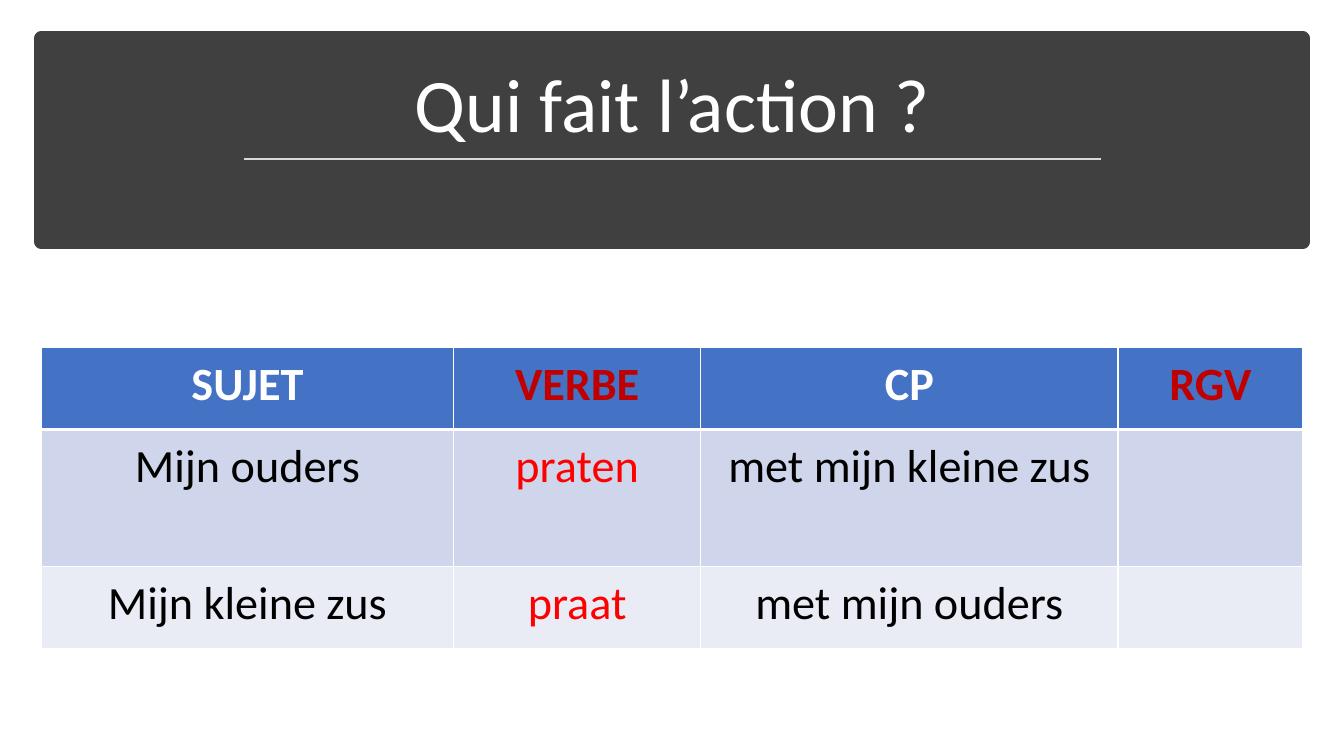
from dataclasses import dataclass

from lxml.etree import SubElement
from pptx import Presentation
from pptx.dml.color import RGBColor
from pptx.enum.shapes import MSO_CONNECTOR, MSO_SHAPE
from pptx.enum.text import MSO_ANCHOR, MSO_AUTO_SIZE, PP_ALIGN
from pptx.oxml.ns import qn
from pptx.util import Inches, Pt


@dataclass(frozen=True)
class Theme:
    font: str = "Calibri"
    title_size: float = 54
    table_size: float = 33
    white: str = "FFFFFF"
    black: str = "000000"
    band: str = "404040"
    rule: str = "D9D9D9"
    header_fill: str = "4472C4"
    row_fills: tuple = ("CFD5EA", "E9EBF5")
    header_accent: str = "C00000"
    verb: str = "FF0000"


class SlideBuilder:
    def __init__(self, slide, theme):
        self.slide = slide
        self.theme = theme

    def set_text(self, frame, text, size, color, bold=False):
        frame.text = text
        paragraph = frame.paragraphs[0]
        paragraph.alignment = PP_ALIGN.CENTER
        for run in paragraph.runs:
            run.font.name = self.theme.font
            run.font.size = Pt(size)
            run.font.bold = bold
            run.font.color.rgb = RGBColor.from_string(color)

    def title(self, text, left, top, width, height):
        heading = self.slide.shapes.title
        heading.left, heading.top = Inches(left), Inches(top)
        heading.width, heading.height = Inches(width), Inches(height)
        frame = heading.text_frame
        self.set_text(frame, text, self.theme.title_size, self.theme.white)
        frame.word_wrap = True
        frame.auto_size = MSO_AUTO_SIZE.NONE
        frame.vertical_anchor = MSO_ANCHOR.BOTTOM
        frame.paragraphs[0].line_spacing = 0.9

    def band(self, left, top, width, height):
        banner = self.slide.shapes.add_shape(
            MSO_SHAPE.RECTANGLE, Inches(left), Inches(top), Inches(width), Inches(height))
        color = RGBColor.from_string(self.theme.band)
        banner.shadow.inherit = False
        banner.fill.solid()
        banner.fill.fore_color.rgb = color
        banner.line.color.rgb = color
        banner.line.width = Pt(10)
        self.slide.shapes.title.element.addprevious(banner.element)

    def rule(self, left, right, y):
        underline = self.slide.shapes.add_connector(
            MSO_CONNECTOR.STRAIGHT, Inches(left), Inches(y), Inches(right), Inches(y))
        underline.line.color.rgb = RGBColor.from_string(self.theme.rule)
        underline.line.width = Pt(1.75)
        SubElement(underline.element.spPr, qn("a:effectLst"))

    def borders(self, cell, top, bottom):
        properties = cell._tc.get_or_add_tcPr()
        for side, width in (("L", 1), ("R", 1), ("T", top), ("B", bottom)):
            edge = SubElement(properties, qn(f"a:ln{side}"), w=str(Pt(width)))
            fill = SubElement(edge, qn("a:solidFill"))
            SubElement(fill, qn("a:srgbClr"), val=self.theme.white)

    def cell(self, cell, text, fill, color, bold, top, bottom):
        cell.margin_left = cell.margin_right = Inches(0.18)
        cell.margin_top = cell.margin_bottom = Inches(0.09)
        self.borders(cell, top, bottom)
        cell.fill.solid()
        cell.fill.fore_color.rgb = RGBColor.from_string(fill)
        if text:
            self.set_text(cell.text_frame, text, self.theme.table_size, color, bold)

    def table(self, rows, left, top, widths, heights):
        theme = self.theme
        grid = self.slide.shapes.add_table(
            len(rows), len(widths), Inches(left), Inches(top),
            Inches(sum(widths)), Inches(sum(heights))).table
        for column, width in zip(grid.columns, widths):
            column.width = Inches(width)
        for row, height in zip(grid.rows, heights):
            row.height = Inches(height)
        header_colors = (theme.white, theme.header_accent) * 2
        body_colors = (theme.black, theme.verb, theme.black, theme.black)
        for r, texts in enumerate(rows):
            header = r == 0
            fill = theme.header_fill if header else theme.row_fills[(r - 1) % 2]
            colors = header_colors if header else body_colors
            for c, text in enumerate(texts):
                self.cell(grid.cell(r, c), text, fill, colors[c], header,
                          top=3 if r == 1 else 1, bottom=3 if header else 1)


def main():
    deck = Presentation()
    deck.slide_width, deck.slide_height = Inches(13.33), Inches(7.5)
    title_only = deck.slide_layouts[5]
    builder = SlideBuilder(deck.slides.add_slide(title_only), Theme())
    builder.band(0.41, 0.38, 12.51, 2.02)
    builder.title("Qui fait l’action ?", 0.58, 0.51, 12.18, 1.02)
    builder.rule(2.42, 10.92, 1.58)
    sentences = (
        ("SUJET", "VERBE", "CP", "RGV"),
        ("Mijn ouders", "praten", "met mijn kleine zus", ""),
        ("Mijn kleine zus", "praat", "met mijn ouders", ""),
    )
    builder.table(sentences, 0.41, 3.45, (4.09, 2.45, 4.14, 1.83), (0.81, 1.36, 0.81))
    deck.save("out.pptx")


if __name__ == "__main__":
    main()
